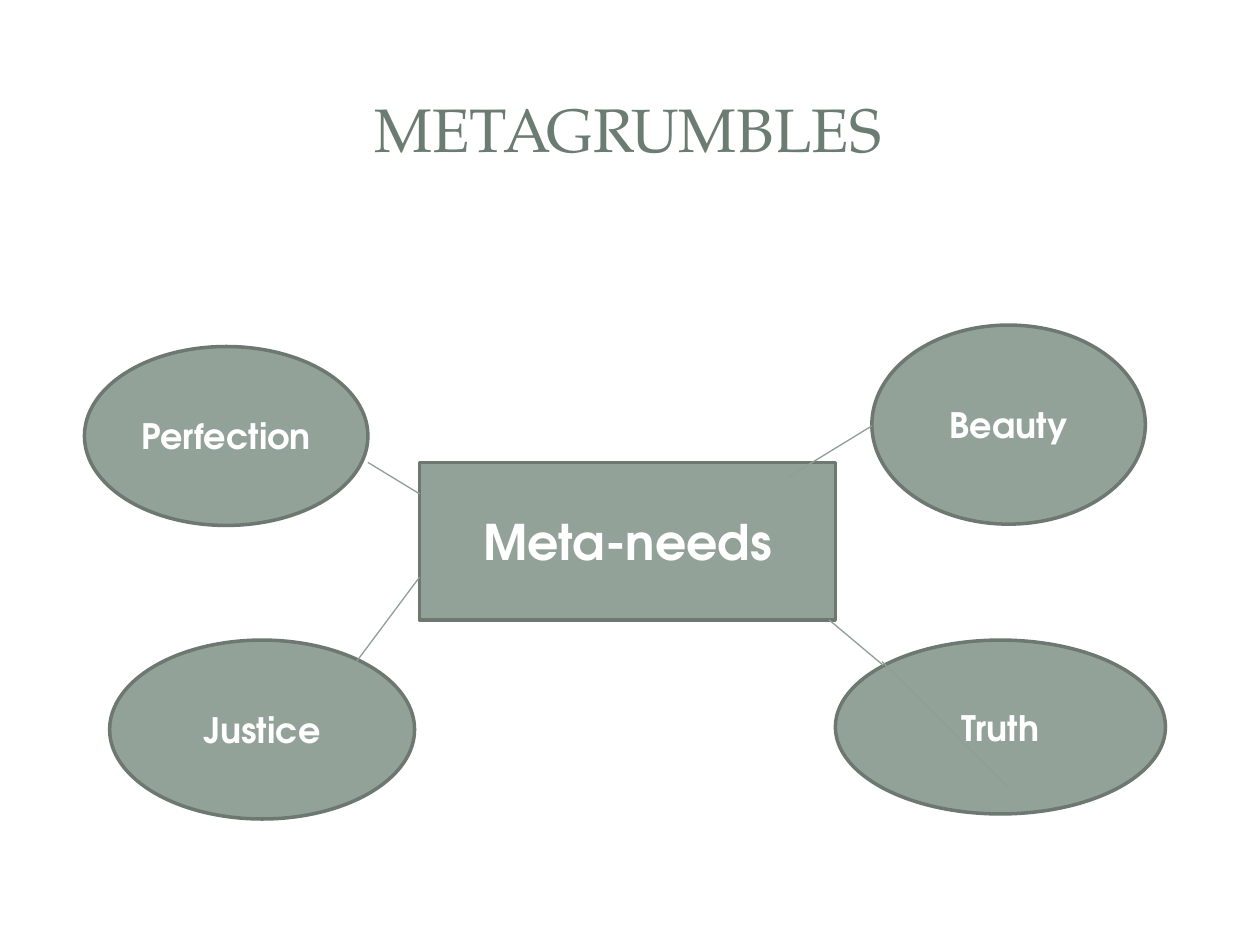
from pptx import Presentation
from pptx.dml.color import RGBColor
from pptx.enum.shapes import MSO_CONNECTOR, MSO_SHAPE
from pptx.enum.text import MSO_ANCHOR, PP_ALIGN
from pptx.oxml.ns import qn
from pptx.util import Inches, Pt
from lxml.etree import SubElement

COLORS = {"title": "6B7D72", "fill": "93A299", "edge": "6D7871",
          "link": "8F9F96", "text": "FFFFFF"}
SERIF, SANS = "TeX Gyre Pagella", "TeX Gyre Adventor"

# Places are left, top, width, height in inches within the diagram
NEEDS = [
    ("Perfection", 0, 0.17, 2.25, 1.42),
    ("Beauty", 6.25, 0, 2.17, 1.58),
    ("Justice", 0.2, 2.5, 2.42, 1.42),
    ("Truth", 5.96, 2.5, 2.62, 1.38),
]
LINKS = [
    (2.25, 1.09, 2.66, 1.34),
    (2.66, 2.0, 2.16, 2.67),
    (6.25, 0.8, 5.58, 1.21),
    (6.33, 2.67, 7.33, 3.67),
    (6.34, 2.7, 5.91, 2.34),
]


def color(name):
    return RGBColor.from_string(COLORS[name])


def write(shape, text, size, face, tone, bold=False):
    frame = shape.text_frame
    frame.text = text
    frame.word_wrap = True
    frame.vertical_anchor = MSO_ANCHOR.MIDDLE
    para = frame.paragraphs[0]
    para.alignment = PP_ALIGN.CENTER
    font = para.runs[0].font
    font.name, font.size, font.bold = face, Pt(size), bold
    font.color.rgb = color(tone)


def add_node(slide, kind, text, size, left, top, width, height):
    node = slide.shapes.add_shape(kind, left, top, width, height)
    node.shadow.inherit = False
    node.fill.solid()
    node.fill.fore_color.rgb = color("fill")
    node.line.color.rgb = color("edge")
    node.line.width = Pt(2)
    write(node, text, size, SANS, "text", bold=True)


def add_link(slide, x1, y1, x2, y2):
    link = slide.shapes.add_connector(MSO_CONNECTOR.STRAIGHT, x1, y1, x2, y2)
    link.line.color.rgb = color("link")
    link.line.width = Pt(0.75)
    SubElement(link._element.spPr, qn("a:effectLst"))


def add_title(slide, left, top, width, height):
    box = slide.shapes.add_textbox(left, top, width, height)
    write(box, "METAGRUMBLES", 35, SERIF, "title")


def add_map(slide, left, top):
    # Central box
    add_node(slide, MSO_SHAPE.RECTANGLE, "Meta-needs", 28,
             left + Inches(2.66), top + Inches(1.09), Inches(3.3), Inches(1.25))
    # Needs around it
    for text, x, y, width, height in NEEDS:
        add_node(slide, MSO_SHAPE.OVAL, text, 20, left + Inches(x),
                 top + Inches(y), Inches(width), Inches(height))
    # Links between them
    for x1, y1, x2, y2 in LINKS:
        add_link(slide, left + Inches(x1), top + Inches(y1),
                 left + Inches(x2), top + Inches(y2))


def main():
    deck = Presentation()
    deck.slide_width, deck.slide_height = Inches(10), Inches(7.5)
    slide = deck.slides.add_slide(deck.slide_layouts[6])
    add_title(slide, Inches(0.47), Inches(0.45), Inches(9.03), Inches(1.14))
    add_map(slide, Inches(0.67), Inches(2.58))
    deck.save("out.pptx")


if __name__ == "__main__":
    main()
